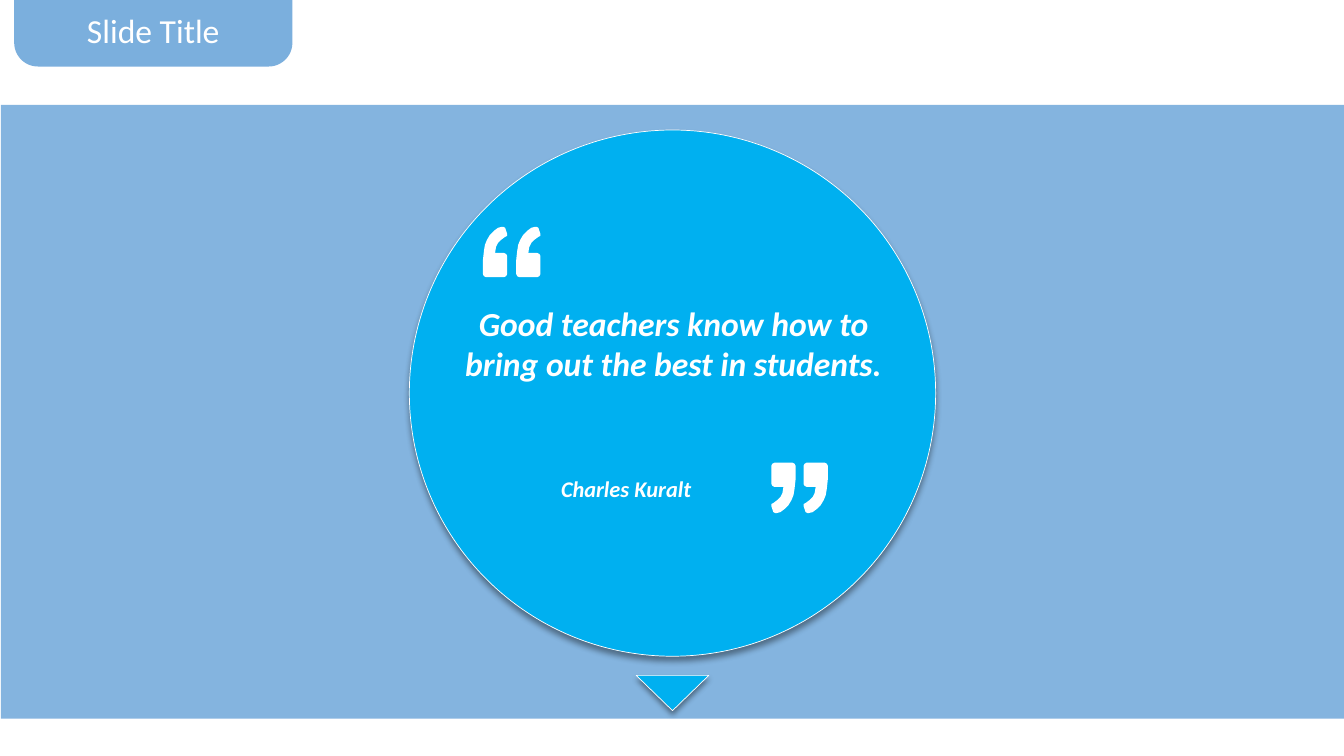
import pptx
import pptx.util
import pptx.dml.color
import pptx.enum.shapes
import pptx.enum.text
import lxml.etree
from pptx.oxml.ns import qn

Inches = pptx.util.Inches
SHAPE = pptx.enum.shapes.MSO_SHAPE

TITLE = ("Slide Title", 24, (0.14, 0.05, 2.76, 0.5))
TEXTS = [
    ("Good teachers know how to bring out the best in students.", 24, (4.44, 3, 4.48, 0.81)),
    ("Charles Kuralt", 16, (5.23, 4.71, 1.96, 0.27)),
]
BAND = (0.01, 1.04, 13.33, 6.09)
CIRCLE = (4.06, 1.29, 5.22, 5.22)
POINTER = (6.31, 6.7, 0.72, 0.35)
TAB = (0.14, -0.01, 2.76, 0.67)
QUOTE_MARKS = [(4.79, 2.25, 0), (5.12, 2.25, 0), (7.65, 4.59, 180), (7.97, 4.59, 180)]
MARK_OUTLINE = [
    (20, 0), (22, 1), (24, 7), (24, 9), (22, 10), (18, 13), (15, 16), (13, 20), (12, 26),
    (21, 26), (23, 27), (24, 29), (24, 47), (23, 49), (21, 50), (3, 50), (1, 49), (0, 47),
    (0, 33), (1, 24), (2, 18), (4, 13), (7, 8), (11, 4), (15, 1), (19, 0),
]
WHITE, CYAN, BLUE = "FFFFFF", "00B0F0", "5B9BD5"


def rgb(value):
    return pptx.dml.color.RGBColor.from_string(value)


def paint(sp, color, opacity=100, outlined=False):
    sp.shadow.inherit = False
    sp.fill.solid()
    sp.fill.fore_color.rgb = rgb(color)
    if opacity < 100:
        clr = sp.element.spPr.find(qn("a:solidFill"))[0]
        lxml.etree.SubElement(clr, qn("a:alpha"), val=str(opacity * 1000))
    if outlined:
        sp.line.color.rgb = rgb(WHITE)
        sp.line.width = pptx.util.Pt(0.5)
    else:
        sp.line.fill.background()


def add_shape(kind, box, color, opacity=100, outlined=False, rotation=0):
    sp = s.shapes.add_shape(kind, *map(Inches, box))
    sp.rotation = rotation
    paint(sp, color, opacity, outlined)
    return sp


def add_shadow(sp):
    effects = sp.element.spPr.find(qn("a:effectLst"))
    shadow = lxml.etree.SubElement(
        effects, qn("a:outerShdw"), blurRad=str(pptx.util.Pt(4)),
        dist=str(pptx.util.Pt(3)), dir="5400000", algn="t", rotWithShape="0")
    clr = lxml.etree.SubElement(shadow, qn("a:srgbClr"), val="000000")
    lxml.etree.SubElement(clr, qn("a:alpha"), val="40000")


def write(sp, text, size, emphasis):
    tf = sp.text_frame
    tf.word_wrap = True
    tf.vertical_anchor = pptx.enum.text.MSO_ANCHOR.TOP
    p = tf.paragraphs[0]
    p.text = text
    p.alignment = pptx.enum.text.PP_ALIGN.CENTER
    p.line_spacing = 1.0
    p.font.name = "Calibri"
    p.font.size = pptx.util.Pt(size)
    p.font.bold = p.font.italic = emphasis
    p.font.color.rgb = rgb(WHITE)
    return tf


prs = pptx.Presentation()
prs.slide_width, prs.slide_height = Inches(13.33), Inches(7.5)
s = prs.slides.add_slide(prs.slide_layouts[5])

add_shape(SHAPE.RECTANGLE, BAND, BLUE, opacity=75)
add_shadow(add_shape(SHAPE.OVAL, CIRCLE, CYAN, outlined=True))
add_shadow(add_shape(SHAPE.ISOSCELES_TRIANGLE, POINTER, CYAN, outlined=True, rotation=180))

for left, top, rotation in QUOTE_MARKS:
    fb = s.shapes.build_freeform(*MARK_OUTLINE[0], scale=Inches(0.01))
    fb.add_line_segments(MARK_OUTLINE[1:], close=True)
    mark = fb.convert_to_shape(Inches(left), Inches(top))
    mark.rotation = rotation
    paint(mark, WHITE)

for text, size, box in TEXTS:
    tf = write(s.shapes.add_textbox(*map(Inches, box)), text, size, True)
    tf.margin_left = tf.margin_right = tf.margin_top = tf.margin_bottom = 0

tab = add_shape(SHAPE.ROUND_2_SAME_RECTANGLE, TAB, BLUE, opacity=80, rotation=180)
tab.adjustments[0] = 0.352

text, size, box = TITLE
title = s.shapes.title
title.left, title.top, title.width, title.height = map(Inches, box)
write(title, text, size, False)
s.shapes.element.append(title.element)

prs.save("out.pptx")
